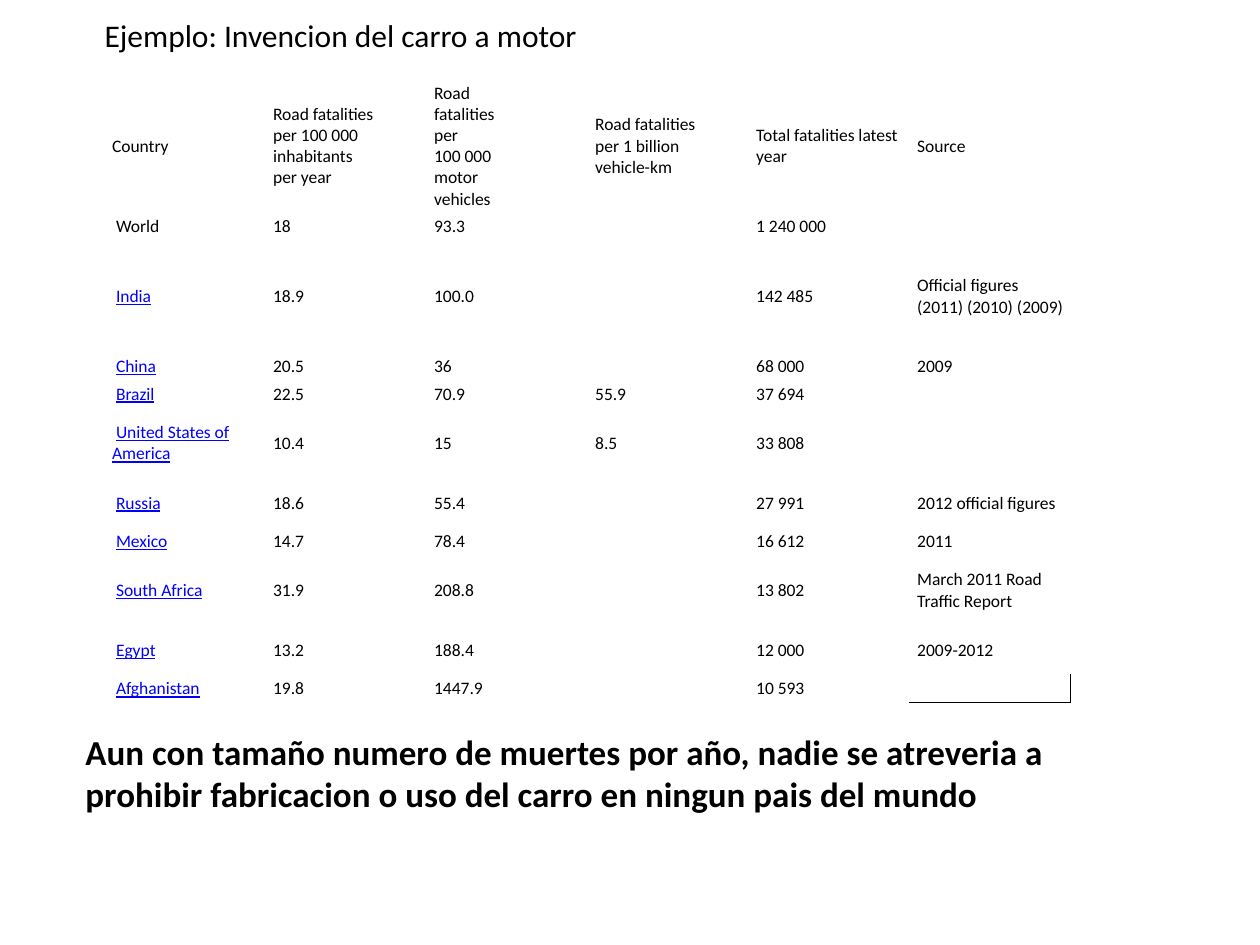
from lxml import etree
from pptx import Presentation
from pptx.dml.color import RGBColor
from pptx.enum.text import MSO_ANCHOR, MSO_AUTO_SIZE, PP_ALIGN
from pptx.oxml.ns import qn
from pptx.util import Inches, Pt

TOP, MIDDLE = MSO_ANCHOR.TOP, MSO_ANCHOR.MIDDLE
NO_FIT, GROW = MSO_AUTO_SIZE.NONE, MSO_AUTO_SIZE.SHAPE_TO_FIT_TEXT
LEFT = PP_ALIGN.LEFT
BLACK = RGBColor(0, 0, 0)
BLUE = RGBColor(0, 0, 255)
FONT = "Calibri"
TITLE_SIZE, CELL_SIZE, CLAIM_SIZE = Pt(18), Pt(10), Pt(20)
SIDE_PAD, END_PAD = Inches(0.06), Inches(0.02)
EDGE = Pt(1)
NBSP = " "

HEAD, LOW, MID, HIGH, TALL = map(Inches, (1.06, 0.22, 0.39, 0.56, 0.89))
HEADS = (
    "Country",
    "Road fatalities\nper 100 000\ninhabitants\nper year",
    "Road\nfatalities\nper\n100 000\nmotor\nvehicles",
    "Road fatalities\nper 1 billion\nvehicle-km",
    "Total fatalities latest year",
    "Source",
)
WORLD = "World"
ROWS = [
    (HEAD, HEADS),
    (LOW, (WORLD, "18", "93.3", "", "1 240 000", "")),
    (TALL, ("India", "18.9", "100.0", "", "142 485",
            "Official figures (2011) (2010) (2009)")),
    (LOW, ("China", "20.5", "36", "", "68 000", "2009")),
    (LOW, ("Brazil", "22.5", "70.9", "55.9", "37 694", "")),
    (HIGH, ("United States of America", "10.4", "15", "8.5", "33 808", "")),
    (MID, ("Russia", "18.6", "55.4", "", "27 991", "2012 official figures")),
    (LOW, ("Mexico", "14.7", "78.4", "", "16 612", "2011")),
    (HIGH, ("South Africa", "31.9", "208.8", "", "13 802",
            "March 2011 Road Traffic Report")),
    (MID, ("Egypt", "13.2", "188.4", "", "12 000", "2009-2012")),
    (LOW, ("Afghanistan", "19.8", "1447.9", "", "10 593", "")),
]


def add_run(para, text, size, color=BLACK, bold=False, line=False):
    run = para.add_run()
    run.text = text
    font = run.font
    font.name, font.size = FONT, size
    font.bold, font.underline = bold, line
    font.color.rgb = color


def add_title(slide, left, top, width, height):
    title = slide.shapes.title
    title.left, title.top, title.width, title.height = left, top, width, height
    frame = title.text_frame
    frame.word_wrap = False
    frame.auto_size = NO_FIT
    frame.vertical_anchor = TOP
    para = frame.paragraphs[0]
    para.alignment = LEFT
    add_run(para, "Ejemplo: Invencion del carro a motor", TITLE_SIZE)


def style_cell(cell):
    cell.fill.background()
    cell.vertical_anchor = MIDDLE
    cell.margin_left = cell.margin_right = SIDE_PAD
    cell.margin_top = cell.margin_bottom = END_PAD


def write_place(para, name):
    add_run(para, NBSP, CELL_SIZE)
    if name == WORLD:
        add_run(para, name, CELL_SIZE)
    else:
        add_run(para, name, CELL_SIZE, BLUE, line=True)


def write_text(para, text):
    if not text:
        size = str(CELL_SIZE.centipoints)
        etree.SubElement(para._p, qn("a:endParaRPr"), sz=size)
        return
    for i, part in enumerate(text.split("\n")):
        if i:
            para.add_line_break()
        add_run(para, part, CELL_SIZE)


def add_edges(cell):
    props = cell._tc.get_or_add_tcPr()
    for i, side in enumerate(("a:lnR", "a:lnB")):
        edge = etree.Element(qn(side), w=str(EDGE))
        fill = etree.SubElement(edge, qn("a:solidFill"))
        etree.SubElement(fill, qn("a:srgbClr"), val=str(BLACK))
        props.insert(i, edge)


def add_grid(slide, left, top, width, height):
    shape = slide.shapes.add_table(
        len(ROWS), len(HEADS), left, top, width, height
    )
    table = shape.table
    table.first_row = table.horz_banding = False
    for r, (tall, texts) in enumerate(ROWS):
        table.rows[r].height = tall
        for c, text in enumerate(texts):
            cell = table.cell(r, c)
            style_cell(cell)
            write = write_place if r > 0 and c == 0 else write_text
            write(cell.text_frame.paragraphs[0], text)
    add_edges(table.cell(len(ROWS) - 1, len(HEADS) - 1))


def add_claim(slide, left, top, width, height):
    frame = slide.shapes.add_textbox(left, top, width, height).text_frame
    frame.word_wrap = True
    frame.auto_size = GROW
    claim = (
        "Aun con tamaño numero de muertes por año, nadie se atreveria a "
        "prohibir fabricacion o uso del carro en ningun pais del mundo"
    )
    add_run(frame.paragraphs[0], claim, CLAIM_SIZE, bold=True)


def main():
    deck = Presentation()
    deck.slide_width, deck.slide_height = Inches(10), Inches(7.5)
    slide = deck.slides.add_slide(deck.slide_layouts[5])
    add_title(slide, Inches(0.73), Inches(0.08), Inches(3.99), Inches(0.71))
    add_grid(slide, Inches(0.83), Inches(0.63), Inches(7.67), Inches(4.95))
    add_claim(slide, Inches(0.58), Inches(5.75), Inches(8.58), Inches(0.77))
    deck.save("out.pptx")


if __name__ == "__main__":
    main()
